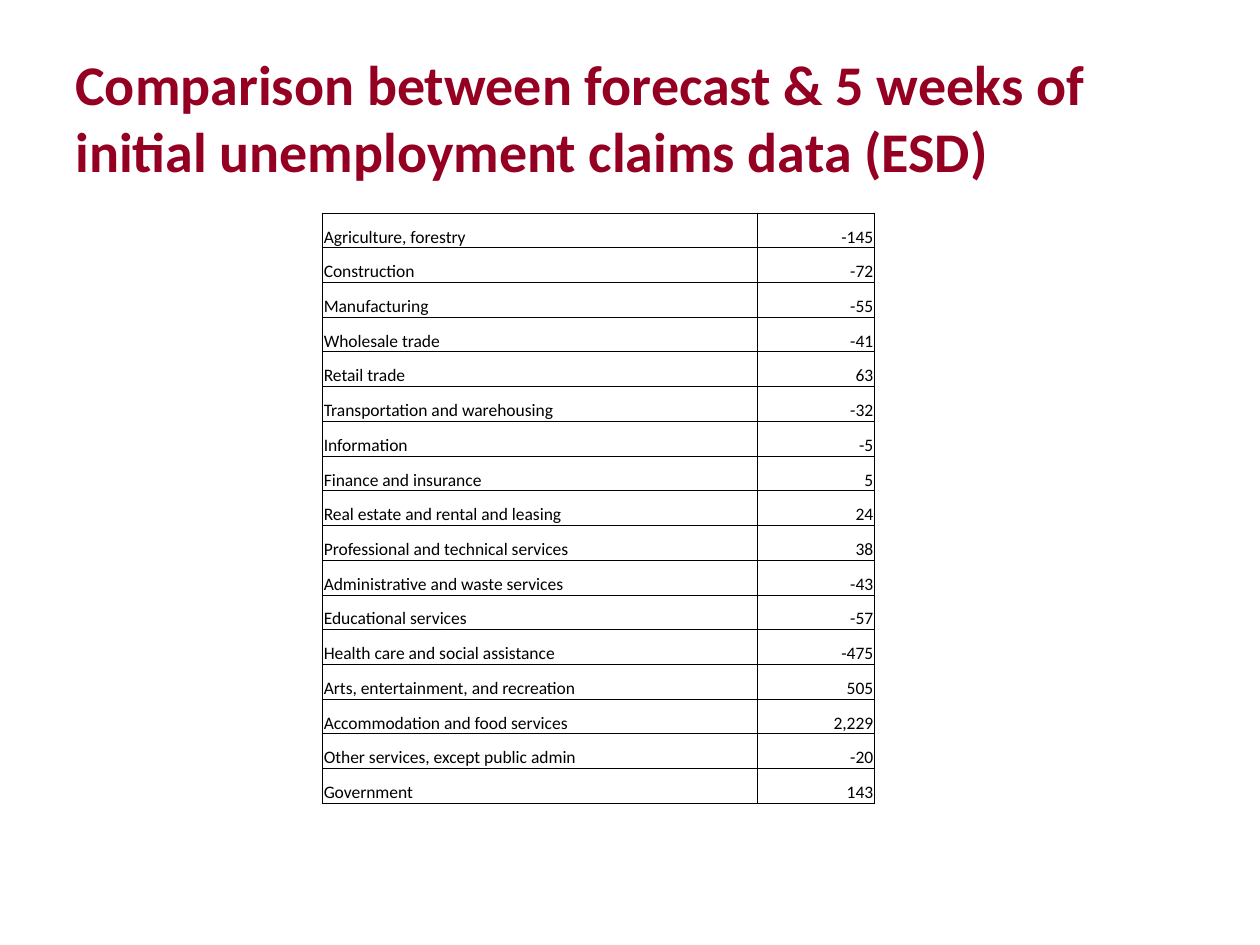
"""Build a slide comparing the forecast with initial unemployment claims."""
from lxml import etree
from pptx import Presentation
from pptx.dml.color import RGBColor
from pptx.enum.text import MSO_ANCHOR, PP_ALIGN
from pptx.oxml.ns import qn
from pptx.util import Inches, Pt

MIDDLE, BOTTOM = MSO_ANCHOR.MIDDLE, MSO_ANCHOR.BOTTOM
LEFT, RIGHT = PP_ALIGN.LEFT, PP_ALIGN.RIGHT
FONT, RED, BLACK, WHITE = "Calibri", "950022", "000000", "FFFFFF"

TITLE = "Comparison between forecast & 5 weeks of initial unemployment claims data (ESD)"
ROWS = [
    ("Agriculture, forestry", "-145"),
    ("Construction", "-72"),
    ("Manufacturing", "-55"),
    ("Wholesale trade", "-41"),
    ("Retail trade", "63"),
    ("Transportation and warehousing", "-32"),
    ("Information", "-5"),
    ("Finance and insurance", "5"),
    ("Real estate and rental and leasing", "24"),
    ("Professional and technical services", "38"),
    ("Administrative and waste services", "-43"),
    ("Educational services", "-57"),
    ("Health care and social assistance", "-475"),
    ("Arts, entertainment, and recreation", "505"),
    ("Accommodation and food services", "2,229"),
    ("Other services, except public admin", "-20"),
    ("Government", "143"),
]
WIDTHS = (3.45, 0.93)
ALIGNS = (LEFT, RIGHT)


def color(code):
    return RGBColor.from_string(code)


def write(frame, text, size, code, align=LEFT, bold=False):
    para = frame.paragraphs[0]
    para.alignment = align
    run = para.add_run()
    run.text = text
    font = run.font
    font.name, font.size, font.bold = FONT, Pt(size), bold
    font.color.rgb = color(code)


def border(cell):
    props = cell._tc.get_or_add_tcPr()
    for spot, side in enumerate(("a:lnL", "a:lnR", "a:lnT", "a:lnB")):
        line = etree.Element(qn(side), w=str(Pt(0.5)))
        fill = etree.SubElement(line, qn("a:solidFill"))
        etree.SubElement(fill, qn("a:srgbClr"), val=BLACK)
        props.insert(spot, line)


def add_title(slide):
    box = slide.shapes.add_textbox(Inches(0.5), Inches(0.3), Inches(9), Inches(1.25))
    frame = box.text_frame
    frame.word_wrap = True
    frame.vertical_anchor = MIDDLE
    write(frame, TITLE, 32, RED, bold=True)


def add_claims(slide):
    table = slide.shapes.add_table(
        len(ROWS), len(WIDTHS), Inches(2.56), Inches(1.69),
        Inches(sum(WIDTHS)), Inches(4.69)).table
    table.first_row = table.horz_banding = False
    for col, width in zip(table.columns, WIDTHS):
        col.width = Inches(width)
    for row, texts in zip(table.rows, ROWS):
        for cell, text, align in zip(row.cells, texts, ALIGNS):
            cell.margin_left = cell.margin_right = cell.margin_top = Inches(0.01)
            cell.margin_bottom = 0
            cell.vertical_anchor = BOTTOM
            if align == LEFT:
                cell.fill.solid()
                cell.fill.fore_color.rgb = color(WHITE)
            else:
                cell.fill.background()
            border(cell)
            write(cell.text_frame, text, 10, BLACK, align)


def main():
    deck = Presentation()
    deck.slide_width, deck.slide_height = Inches(10), Inches(7.5)
    slide = deck.slides.add_slide(deck.slide_layouts[6])
    add_title(slide)
    add_claims(slide)
    deck.save("out.pptx")


if __name__ == "__main__":
    main()
